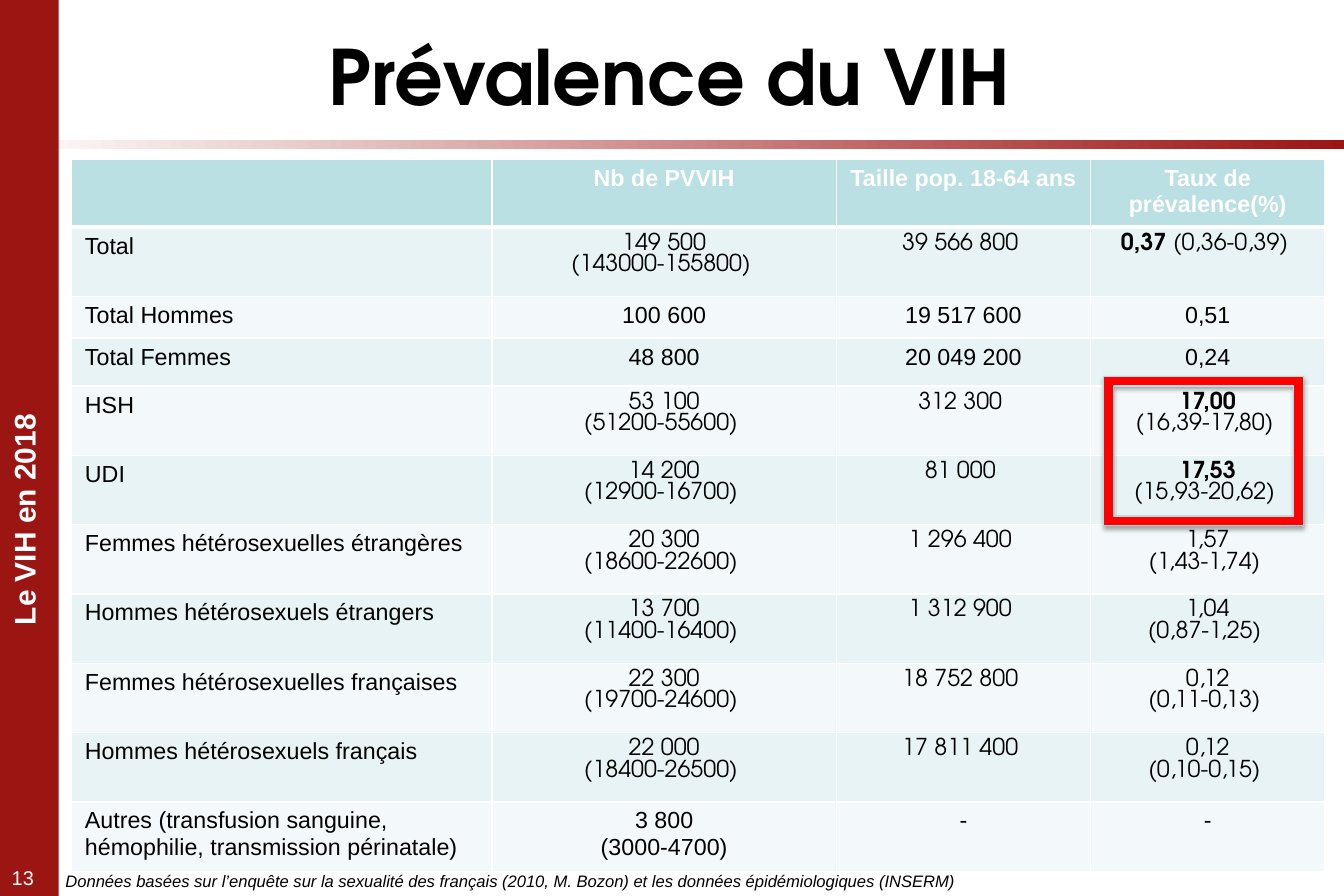
from pptx import Presentation
from pptx.util import Pt
from pptx.dml.color import RGBColor
from pptx.enum.shapes import MSO_SHAPE as Shape
from pptx.enum.text import MSO_ANCHOR as Anchor, PP_ALIGN as Align
from pptx.oxml import parse_xml
from pptx.oxml.ns import nsdecls

# Content
SANS, GEO = "Arial", "TeX Gyre Adventor"
RED, BLACK, WHITE = "9B1513", "000000", "FFFFFF"
HEAD, BANDS = "BBE0E3", ("E7F3F4", "F3F9FA")
TITLE = "Prévalence du VIH"
SIDE = "Le VIH en 2018"
PAGE = "13"
NOTE = ("Données basées sur l’enquête sur la sexualité des français "
        "(2010, M. Bozon) et les données épidémiologiques (INSERM)")
HEADS = ("", "Nb de PVVIH", "Taille pop. 18-64 ans", "Taux de prévalence(%)")

# Label, figure font, people (paragraphs), population, bold rate, rate (paragraphs)
ROWS = [
    ("Total", GEO, ["149 500", "(143000-155800) "], "39 566 800 ",
     "0,37 ", ["(0,36-0,39) "]),
    ("Total Hommes", SANS, ["100 600"], "19 517 600", "", ["0,51"]),
    ("Total Femmes", SANS, ["48 800"], "20 049 200", "", ["0,24"]),
    ("HSH", GEO, ["53 100", "(51200-55600) "], "312 300 ",
     "17,00\n", ["(16,39-17,80) "]),
    ("UDI", GEO, ["14 200", "(12900-16700) "], "81 000 ",
     "17,53\n", ["(15,93-20,62) "]),
    ("Femmes hétérosexuelles étrangères", GEO, ["20 300", "(18600-22600) "],
     "1 296 400 ", "", ["1,57", "(1,43-1,74) "]),
    ("Hommes hétérosexuels étrangers", GEO, ["13 700", "(11400-16400) "],
     "1 312 900 ", "", ["1,04", "(0,87-1,25) "]),
    ("Femmes hétérosexuelles françaises", GEO, ["22 300", "(19700-24600) "],
     "18 752 800 ", "", ["0,12", "(0,11-0,13) "]),
    ("Hommes hétérosexuels français", GEO, ["22 000", "(18400-26500) "],
     "17 811 400 ", "", ["0,12", "(0,10-0,15) "]),
    ("Autres (transfusion sanguine, hémophilie, transmission périnatale)",
     SANS, ["3 800", "(3000-4700)"], "-", "", ["-"]),
]
WIDTHS = (253.4, 207.4, 153.4, 141.1)
TALL = 41.8
HEIGHTS = [41, TALL, 25.2, 28.8] + [TALL] * 7


# Helpers
def paint(target, color):
    target.solid()
    target.fore_color.rgb = RGBColor.from_string(color)


def write(para, text, size, font=SANS, color=BLACK, bold=False, italic=False):
    run = para.add_run()
    run.text = text.rstrip("\n")
    look = run.font
    look.size, look.name, look.bold, look.italic = Pt(size), font, bold, italic
    look.color.rgb = RGBColor.from_string(color)
    if text.endswith("\n"):
        para.add_line_break()


def label(box, text, size, align=Align.LEFT, wrap=True, turn=0,
          anchor=Anchor.TOP, **look):
    shape = slide.shapes.add_textbox(*map(Pt, box))
    shape.rotation = turn
    frame = shape.text_frame
    frame.word_wrap, frame.vertical_anchor = wrap, anchor
    frame.paragraphs[0].alignment = align
    write(frame.paragraphs[0], text, size, **look)


def block(kind, box):
    shape = slide.shapes.add_shape(kind, *map(Pt, box))
    shape.shadow.inherit = False
    shape.line.fill.background()
    return shape


def edge(cell, head, under):
    for i, side in enumerate("LRTB"):
        thick = (side == "B" and head) or (side == "T" and under)
        cell._tc.get_or_add_tcPr().insert(i, parse_xml(
            f'<a:ln{side} {nsdecls("a")} w="{Pt(3 if thick else 1)}">'
            f'<a:solidFill><a:srgbClr val="{WHITE}"/></a:solidFill></a:ln{side}>'))


def fill_cell(cell, lines, align, font=SANS, color=BLACK, bold=False, lead=""):
    cell.margin_left = cell.margin_right = Pt(8)
    cell.margin_top = cell.margin_bottom = Pt(3.6)
    frame = cell.text_frame
    for i, line in enumerate(lines):
        para = frame.add_paragraph() if i else frame.paragraphs[0]
        para.alignment = align
        if lead and not i:
            write(para, lead, 14, font, color, True)
        if line:
            write(para, line, 14, font, color, bold)


deck = Presentation()
deck.slide_width, deck.slide_height = Pt(810), Pt(540)
slide = deck.slides.add_slide(deck.slide_layouts[6])

# Gradient rule and side band
rule = block(Shape.RECTANGLE, (0, 84.4, 810, 5.6))
rule.fill.gradient()
rule.fill.gradient_angle = 0
for stop, color in zip(rule.fill.gradient_stops, (WHITE, RED)):
    stop.color.rgb = RGBColor.from_string(color)
paint(block(Shape.RECTANGLE, (0, 0, 35.3, 540)).fill, RED)

# Side label, page number, title
label((-56.9, 298.8, 142.6, 28.8), SIDE, 18, Align.CENTER, False, 270,
      color=WHITE, bold=True)
label((0, 518.4, 33.1, 21.6), PAGE, 12, color=WHITE)
label((0, 0, 807, 90), TITLE, 46, Align.CENTER, anchor=Anchor.MIDDLE,
      font=GEO, bold=True)

# Table
grid = slide.shapes.add_table(
    len(HEIGHTS), len(WIDTHS), Pt(43.2), Pt(95.8),
    Pt(sum(WIDTHS)), Pt(sum(HEIGHTS))).table
grid.horz_banding = False
for col, width in zip(grid.columns, WIDTHS):
    col.width = Pt(width)
for row, height in zip(grid.rows, HEIGHTS):
    row.height = Pt(height)
for c, text in enumerate(HEADS):
    fill_cell(grid.cell(0, c), [text], Align.CENTER, color=WHITE, bold=True)
for r, (name, font, people, size, lead, rate) in enumerate(ROWS, 1):
    fill_cell(grid.cell(r, 0), [name], Align.LEFT)
    fill_cell(grid.cell(r, 1), people, Align.CENTER, font)
    fill_cell(grid.cell(r, 2), [size], Align.CENTER, font)
    fill_cell(grid.cell(r, 3), rate, Align.CENTER, font, lead=lead)
for r in range(len(HEIGHTS)):
    for c in range(len(WIDTHS)):
        cell = grid.cell(r, c)
        paint(cell.fill, BANDS[(r - 1) % 2] if r else HEAD)
        edge(cell, r == 0, r == 1)

# Red frame round the two highest rates
mark = block(Shape.FRAME, (665.3, 226.8, 120.2, 90))
mark.adjustments[0] = 0.065
paint(mark.fill, "FF0000")
paint(mark.line.fill, "B6DCDF")
mark.line.width = Pt(0.75)
glow = mark._element.spPr.find(
    "{http://schemas.openxmlformats.org/drawingml/2006/main}effectLst")
glow.append(parse_xml(
    f'<a:outerShdw {nsdecls("a")} blurRad="{Pt(3.1)}" dist="{Pt(1.8)}" '
    f'dir="5400000" rotWithShape="0"><a:srgbClr val="{BLACK}">'
    '<a:alpha val="35000"/></a:srgbClr></a:outerShdw>'))

# Source note
label((32.4, 521.3, 556.6, 19.4), NOTE, 10, wrap=False, italic=True)

deck.save("out.pptx")
